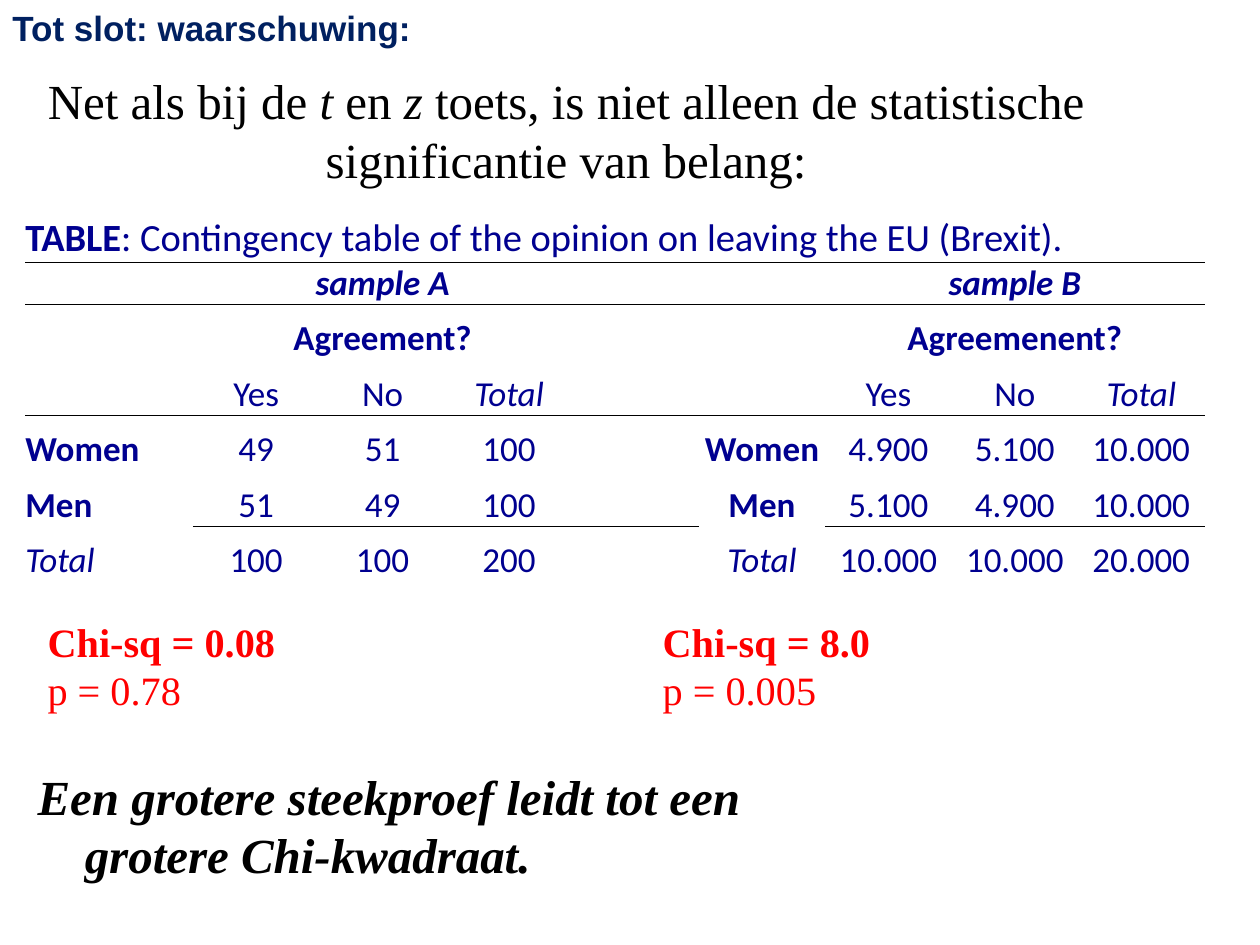
from lxml.etree import SubElement
from pptx import Presentation
from pptx.dml.color import RGBColor
from pptx.enum.text import MSO_ANCHOR as Anchor, PP_ALIGN as Align
from pptx.oxml import parse_xml
from pptx.oxml.ns import nsdecls, qn
from pptx.util import Cm, Pt

COLORS = {"black": "000000", "table": "000090", "result": "FF0000", "heading": "002060"}
SERIF = "Times New Roman"


def add_span(para, text, font, size, color, bold=False, italic=False):
    span = para.add_run()
    span.text = text
    span.font.name, span.font.size = font, Pt(size)
    span.font.bold, span.font.italic = bold, italic
    span.font.color.rgb = RGBColor.from_string(COLORS[color])


def add_box(page, left, top, width, height, anchor=Anchor.TOP):
    box = page.shapes.add_textbox(Cm(left), Cm(top), Cm(width), Cm(height))
    box.text_frame.word_wrap = True
    box.text_frame.vertical_anchor = anchor
    return box.text_frame.paragraphs[0]


deck = Presentation()
deck.slide_width, deck.slide_height = Cm(25.4), Cm(19.05)
page = deck.slides.add_slide(deck.slide_layouts[6])

# Statement above the table
para = add_box(page, 0.1, 1.32, 22.63, 2.59, Anchor.MIDDLE)
para.alignment = Align.CENTER
for text, italic in [("Net als bij de ", False), ("t", True), (" en ", False), ("z", True),
                     (" toets, is niet alleen de statistische significantie van belang:", False)]:
    add_span(para, text, SERIF, 28, "black", italic=italic)

# Contingency table: both samples side by side
ROWS = [
    ["TABLE"] + [""] * 8,
    ["", "sample A", "", "", "", "", "sample B", "", ""],
    ["", "Agreement?", "", "", "", "", "Agreemenent?", "", ""],
    ["", "Yes", "No", "Total", "", "", "Yes", "No", "Total"],
    ["Women", "49", "51", "100", "", "Women", "4.900", "5.100", "10.000"],
    ["Men", "51", "49", "100", "", "Men", "5.100", "4.900", "10.000"],
    ["Total", "100", "100", "200", "", "Total", "10.000", "10.000", "20.000"],
]
BOLD = {"TABLE", "sample A", "sample B", "Agreement?", "Agreemenent?", "Women", "Men"}
ITALIC = {"sample A", "sample B", "Total"}
ALL_COLUMNS = set(range(9))
RULED = {0: ALL_COLUMNS, 1: ALL_COLUMNS, 3: ALL_COLUMNS, 5: ALL_COLUMNS - {0, 5}}

frame = page.shapes.add_table(7, 9, Cm(0.51), Cm(3.63), Cm(23.8), Cm(8.08))
table = frame.table
table.first_row = table.horz_banding = False
# Style without grid or fill
table._tbl.tblPr.find(qn("a:tableStyleId")).text = "{2D5ABB26-0587-4C30-8999-92F81FD0307C}"
for index, column in enumerate(table.columns):
    column.width = Cm(3.38 if index == 0 else 2.55)
for row, height in zip(table.rows, [1.65, 0.86] + [1.12] * 5):
    row.height = Cm(height)

for r, texts in enumerate(ROWS):
    for c, text in enumerate(texts):
        cell = table.cell(r, c)
        cell.margin_left = cell.margin_right = cell.margin_top = cell.margin_bottom = 0
        cell.vertical_anchor = Anchor.BOTTOM
        cell.fill.background()
        if c in RULED.get(r, ()):
            line = parse_xml(f'<a:lnB w="6350" {nsdecls("a")}><a:solidFill>'
                             f'<a:srgbClr val="{COLORS["black"]}"/></a:solidFill></a:lnB>')
            cell._tc.get_or_add_tcPr().insert(0, line)
        para = cell.text_frame.paragraphs[0]
        if text:
            para.alignment = Align.CENTER if c else Align.LEFT
            add_span(para, text, "Calibri", 20 if r else 22, "table", text in BOLD, text in ITALIC)
        else:
            SubElement(para._p, qn("a:endParaRPr")).set("sz", "1800")

add_span(table.cell(0, 0).text_frame.paragraphs[0],
         ": Contingency table of the opinion on leaving the EU (Brexit).", "Calibri", 22, "table")
table.cell(0, 0).merge(table.cell(0, 8))
for r in (1, 2):
    for c in (1, 6):
        table.cell(r, c).merge(table.cell(r, c + 2))

# Conclusion with hanging indent
para = add_box(page, 0.51, 15.32, 15.8, 1.68)
para.space_before = Pt(6)
indent = para._p.get_or_add_pPr()
indent.set("marL", str(Cm(0.95)))
indent.set("indent", str(-Cm(0.95)))
add_span(para, "Een grotere steekproef leidt tot een grotere Chi-kwadraat.",
         SERIF, 28, "black", bold=True, italic=True)

# Test result under each sample
for left, width, chi, p_value in [(0.71, 5.56, "0.08", "0.78"), (13.11, 5.16, "8.0", "0.005")]:
    para = add_box(page, left, 12.32, width, 2.24)
    add_span(para, f"Chi-sq = {chi}", SERIF, 23, "result", bold=True)
    para.add_line_break()
    add_span(para, f"p = {p_value}", SERIF, 23, "result")

# Heading
para = add_box(page, 0, 0, 19.51, 1.12)
add_span(para, "Tot slot: waarschuwing:", "Arial", 20, "heading", bold=True)

deck.save("out.pptx")
